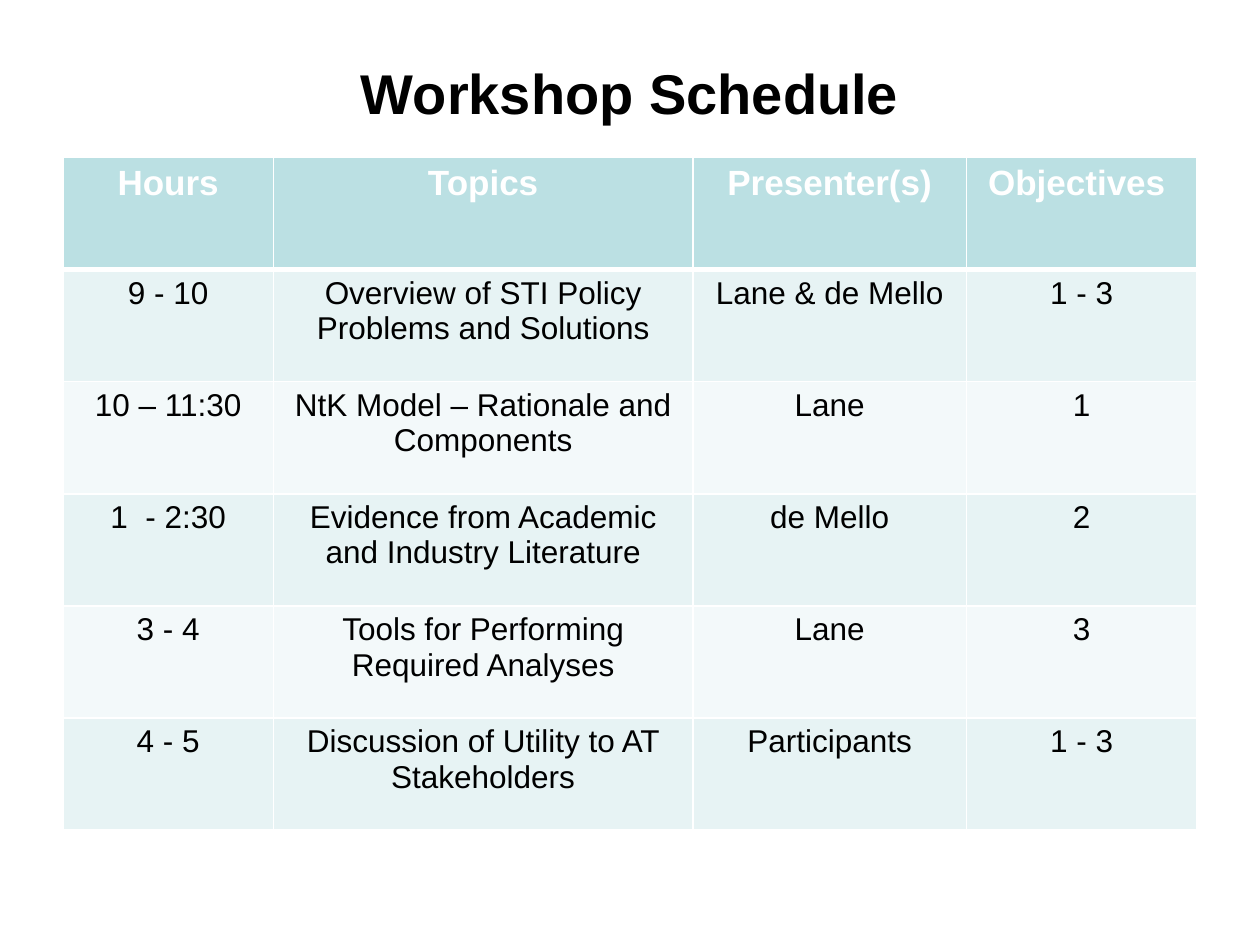
"""Build the workshop schedule slide."""
from pptx import Presentation
from pptx.dml.color import RGBColor
from pptx.enum import text
from pptx.oxml import parse_xml
from pptx.oxml.ns import nsdecls
from pptx.util import Inches, Pt

BLACK = RGBColor(0x00, 0x00, 0x00)
WHITE = RGBColor(0xFF, 0xFF, 0xFF)
TEAL = RGBColor(0xBB, 0xE0, 0xE3)
BANDS = (RGBColor(0xE7, 0xF3, 0xF4), RGBColor(0xF3, 0xF9, 0xFA))

TITLE = "Workshop Schedule"
HEADS = ("Hours", "Topics", "Presenter(s)", "Objectives ")
ROWS = (
    ("9 - 10", "Overview of STI Policy Problems and Solutions", "Lane & de Mello", "1 - 3"),
    ("10 – 11:30", "NtK Model – Rationale and Components", "Lane", "1"),
    ("1  - 2:30", "Evidence from Academic and Industry Literature", "de Mello", "2"),
    ("3 - 4", "Tools for Performing Required Analyses", "Lane", "3"),
    ("4 - 5", "Discussion of Utility to AT Stakeholders", "Participants", "1 - 3"),
)
WIDTHS = (1.67, 3.33, 2.17, 1.83)
HEIGHT = 0.89


def write(frame, words, size=18, color=BLACK, bold=False, line=1.0, after=0):
    """Put one centred paragraph in a text frame."""
    frame.word_wrap = True
    para = frame.paragraphs[0]
    para.alignment = text.PP_ALIGN.CENTER
    para.line_spacing = line
    para.space_before = Pt(0)
    para.space_after = Pt(after)
    run = para.add_run()
    run.text = words
    font = run.font
    font.name, font.size, font.bold = "Arial", Pt(size), bold
    font.color.rgb = color


def edge(cell, **sides):
    """Draw white cell borders, with a width in points for each side."""
    props = cell._tc.get_or_add_tcPr()
    for spot, (side, width) in enumerate(sides.items()):
        props.insert(spot, parse_xml(
            f'<a:ln{side} {nsdecls("a")} w="{Pt(width)}"><a:solidFill>'
            f'<a:srgbClr val="{WHITE}"/></a:solidFill></a:ln{side}>'))


def main():
    """Lay out the title and the table."""
    deck = Presentation()
    deck.slide_width, deck.slide_height = Inches(10), Inches(7.5)
    slide = deck.slides.add_slide(deck.slide_layouts[6])

    title = slide.shapes.add_textbox(Inches(0.5), Inches(0.3), Inches(9), Inches(0.87))
    title.text_frame.vertical_anchor = text.MSO_ANCHOR.MIDDLE
    write(title.text_frame, TITLE, size=32, bold=True)

    data = (HEADS, *ROWS)
    table = slide.shapes.add_table(
        len(data), len(WIDTHS), Inches(0.5), Inches(1.25),
        Inches(sum(WIDTHS)), Inches(HEIGHT * len(data))).table
    for col, width in zip(table.columns, WIDTHS):
        col.width = Inches(width)
    for r, row in enumerate(data):
        table.rows[r].height = Inches(HEIGHT)
        for c, words in enumerate(row):
            cell = table.cell(r, c)
            cell.fill.solid()
            if r == 0:
                cell.fill.fore_color.rgb = TEAL
                cell.margin_left = cell.margin_right = Inches(0.07)
                cell.margin_top = cell.margin_bottom = 0
                write(cell.text_frame, words, size=20, color=WHITE,
                      bold=True, line=1.15, after=5.7)
            else:
                cell.fill.fore_color.rgb = BANDS[(r - 1) % 2]
                write(cell.text_frame, words)
            edge(cell, L=1, R=1, T=3 if r == 1 else 1, B=3 if r == 0 else 1)
    deck.save("out.pptx")


if __name__ == "__main__":
    main()
